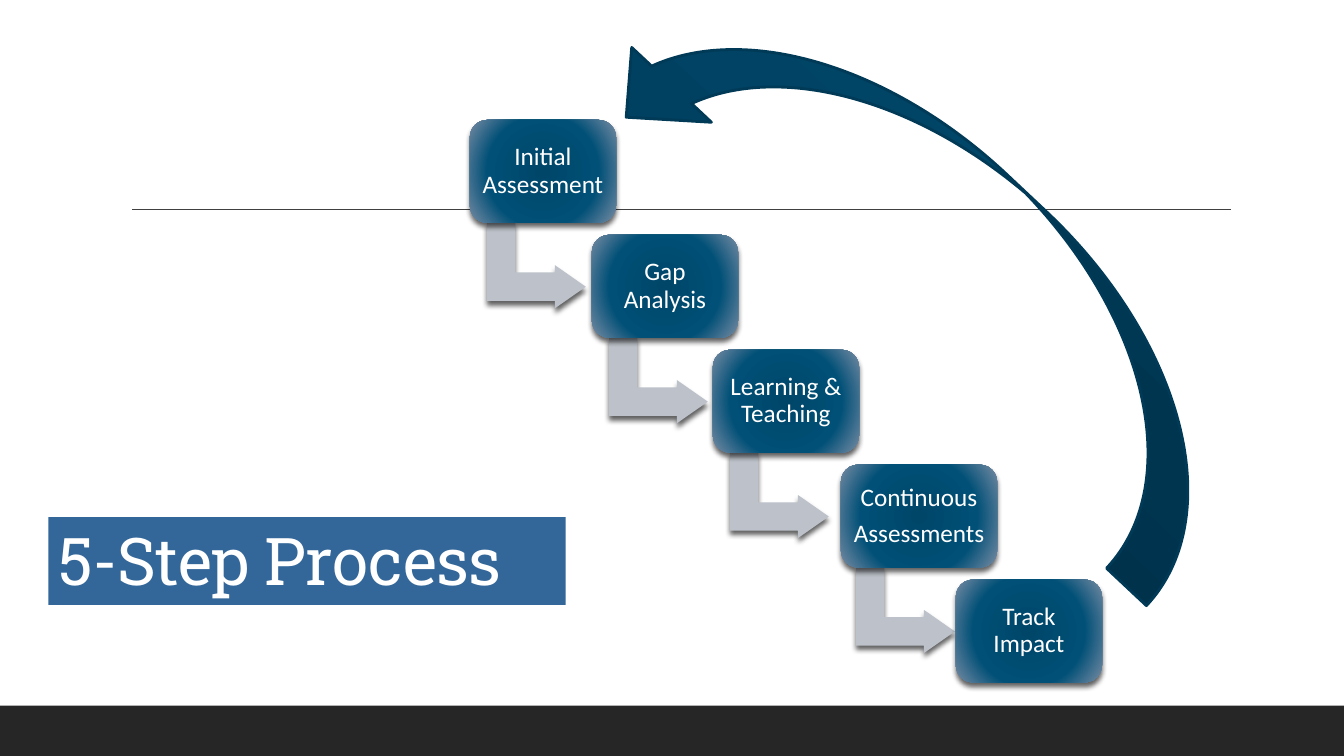
from lxml import etree
from pptx import Presentation, util as u
from pptx.dml.color import RGBColor
from pptx.enum import shapes, text
from pptx.oxml import parse_xml
from pptx.oxml.ns import nsdecls, qn

COLORS = {"footer": "262626", "rule": "404040", "title": "336699", "white": "FFFFFF",
          "elbow": "BDC2CA", "loop_edge": "013A57"}
STEP_STOPS = [(0, "004669"), (62, "005077"), (100, "788CA4")]
LOOP_STOPS = [(0, "002F47"), (50, "004364"), (100, "005077")]
RADIAL = ('<a:path path="circle">'
          '<a:fillToRect l="50000" t="50000" r="50000" b="50000"/></a:path>')
LINEAR = '<a:lin ang="0" scaled="0"/>'
SHADOW = (f'<a:outerShdw {nsdecls("a")} blurRad="50800" dist="38100" dir="5400000" '
          'rotWithShape="0"><a:srgbClr val="000000"><a:alpha val="61000"/>'
          '</a:srgbClr></a:outerShdw>')


def write(shape, content, size, font, color, align, anchor, inset=0.1, after=0, spacing=None):
    frame = shape.text_frame
    frame.word_wrap = True
    frame.auto_size = text.MSO_AUTO_SIZE.NONE
    frame.vertical_anchor = anchor
    frame.margin_left = frame.margin_right = u.Inches(inset)
    frame.margin_top = frame.margin_bottom = u.Inches(min(inset, 0.05))
    frame.text = content
    for index, paragraph in enumerate(frame.paragraphs):
        paragraph.alignment = align
        paragraph.line_spacing = 0.9
        paragraph.space_before = u.Pt(0)
        paragraph.space_after = u.Pt(after if index < len(frame.paragraphs) - 1 else 0)
        run = paragraph.runs[0]
        run.font.size, run.font.name = u.Pt(size), font
        run.font.color.rgb = RGBColor.from_string(color)
        if spacing:
            run.font._element.set("spc", str(spacing))


def add_shape(kind, box, fill, gradient=LINEAR, shadow=False):
    shape = slide.shapes.add_shape(kind, *map(u.Inches, box))
    shape.line.fill.background()
    shape.shadow.inherit = False
    shape.fill.solid()
    properties = shape._element.spPr
    if isinstance(fill, str):
        shape.fill.fore_color.rgb = RGBColor.from_string(fill)
    else:
        stops = "".join(f'<a:gs pos="{pos * 1000}"><a:srgbClr val="{color}"/></a:gs>'
                        for pos, color in fill)
        properties.replace(properties.find(qn("a:solidFill")), parse_xml(
            f'<a:gradFill {nsdecls("a")} rotWithShape="1"><a:gsLst>{stops}</a:gsLst>'
            f'{gradient}</a:gradFill>'))
    if shadow:
        properties.find(qn("a:effectLst")).append(parse_xml(SHADOW))
    return shape


deck = Presentation()
deck.slide_width, deck.slide_height = u.Inches(13.33), u.Inches(7.5)
slide = deck.slides.add_slide(deck.slide_layouts[5])

# Footer bar and horizontal rule
add_shape(shapes.MSO_SHAPE.RECTANGLE, (0, 7, 13.33, 0.5), COLORS["footer"])
rule = slide.shapes.add_connector(shapes.MSO_CONNECTOR.STRAIGHT, u.Inches(1.31),
                                  u.Inches(2.08), u.Inches(12.21), u.Inches(2.08))
rule.line.color.rgb = RGBColor.from_string(COLORS["rule"])
rule.line.width = u.Pt(1)
etree.SubElement(rule._element.spPr, qn("a:effectLst"))

# Title
title = slide.shapes.title
title.left, title.top, title.width, title.height = map(u.Inches, (0.48, 5.13, 5.13, 0.87))
title.fill.solid()
title.fill.fore_color.rgb = RGBColor.from_string(COLORS["title"])
write(title, "5-Step Process", size=47, font="Roboto Slab", color=COLORS["white"],
      align=text.PP_ALIGN.LEFT, anchor=text.MSO_ANCHOR.BOTTOM, spacing=-50)

# Staircase: label, box left, box width, elbow arrow left
steps = [("Initial Assessment", 4.66, 1.45, 4.89),
         ("Gap Analysis", 5.87, 1.45, 6.1),
         ("Learning & Teaching", 7.07, 1.45, 7.3),
         ("Continuous\nAssessments", 8.34, 1.55, 8.55),
         ("Track Impact", 9.48, 1.45, None)]
for number, (label, left, width, elbow_left) in enumerate(steps):
    top = 1.19 + 1.14 * number
    if elbow_left is not None:
        elbow = add_shape(shapes.MSO_SHAPE.BENT_UP_ARROW, (elbow_left, top + 0.95, 0.86, 0.98),
                          COLORS["elbow"], shadow=True)
        elbow.rotation = 90
        for index, value in enumerate((0.328, 0.25, 0.358)):
            elbow.adjustments[index] = value
    step = add_shape(shapes.MSO_SHAPE.ROUNDED_RECTANGLE, (left, top, width, 1.02),
                     STEP_STOPS, RADIAL, shadow=True)
    step.adjustments[0] = 0.167
    write(step, label, size=18, font="Calibri", color=COLORS["white"], inset=0.06, after=6.3,
          align=text.PP_ALIGN.CENTER, anchor=text.MSO_ANCHOR.MIDDLE)

# Arrow looping back to the first step
loop = add_shape(shapes.MSO_SHAPE.CURVED_LEFT_ARROW, (8.25, -1.2, 2.17, 7.62), LOOP_STOPS)
loop.rotation = 313.2
loop._element.spPr.find(qn("a:xfrm")).set("flipV", "1")
loop.line.color.rgb = RGBColor.from_string(COLORS["loop_edge"])
loop.line.width = u.Pt(2)

deck.save("out.pptx")
